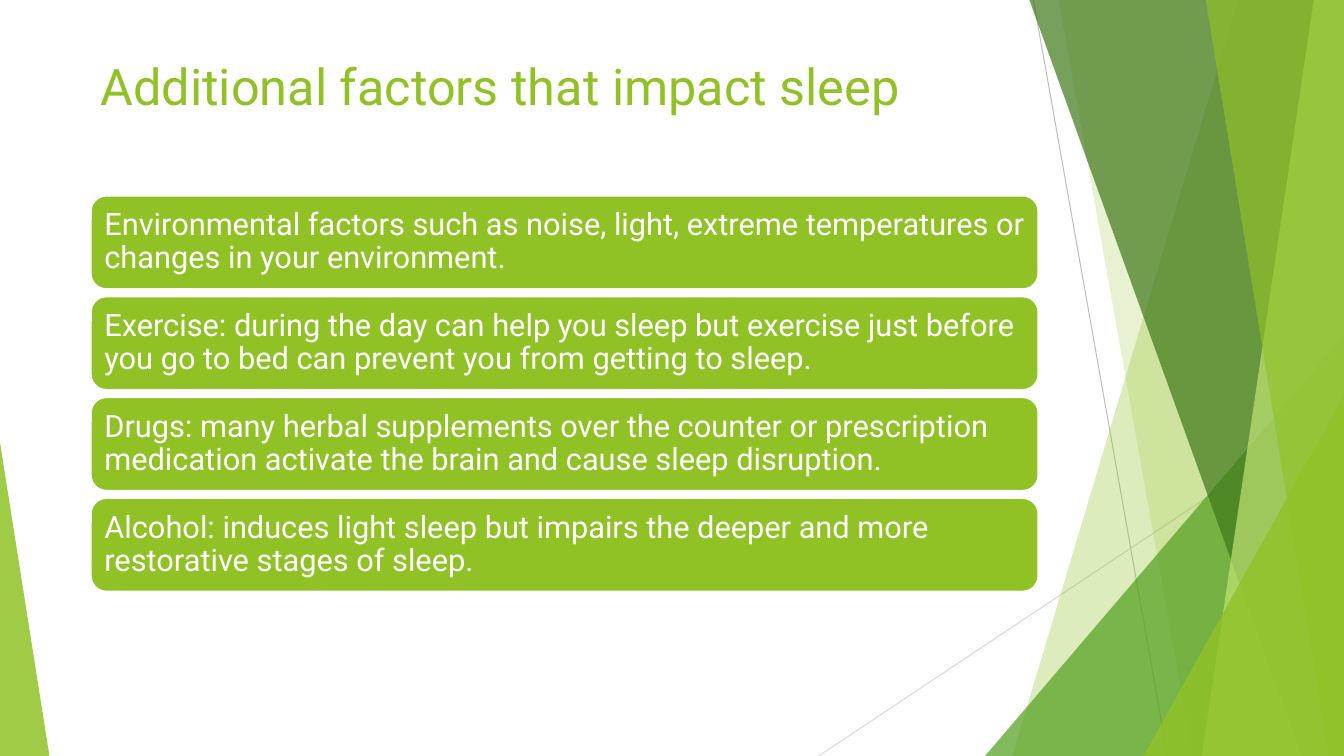
from pptx import Presentation
from pptx.dml.color import RGBColor
from pptx.enum.shapes import MSO_CONNECTOR, MSO_SHAPE
from pptx.enum.text import MSO_ANCHOR, PP_ALIGN
from pptx.oxml.ns import qn
from pptx.util import Inches, Pt
from lxml.etree import SubElement

W, H = 13.33, 7.5
FONT, GREEN, WHITE = "Roboto", "90C226", "FFFFFF"
TITLE = "Additional factors that impact sleep"
FACTORS = [
    "Environmental factors such as noise, light, extreme temperatures or changes in your environment.",
    "Exercise: during the day can help you sleep but exercise just before you go to bed can prevent you from getting to sleep.",
    "Drugs: many herbal supplements over the counter or prescription medication activate the brain and cause sleep disruption.",
    "Alcohol: induces light sleep but impairs the deeper and more restorative stages of sleep.",
]
RAYS = [((10.25, 0), (11.58, H), "BFBFBF"), ((W, 4.03), (8.12, H), "D9D9D9")]
FACETS = [
    ("band", 12.28, 10.04, GREEN, 30),
    ("band", 10.5, 11.83, GREEN, 20),
    ("right", 3.56, 4.17, "54A021", 72),
    ("band", 10.21, 12.91, "3F7819", 70),
    ("band", 13.03, 11.92, "C0E474", 70),
    ("band", 11.96, 13.18, GREEN, 65),
    ("right", 1.99, 3.57, GREEN, 80),
    ("left", 0.49, 3.11, GREEN, 85),
]
LEFT, WIDTH = 0.9, 9.4
TITLE_TOP, TITLE_H = 0.5, 1.44
CARD_TOP, CARD_H, PITCH = 1.94, 0.93, 1.0


def color(value):
    return RGBColor.from_string(value)


def apply(obj, formats):
    for name, value in formats.items():
        setattr(obj, name, value)


def paint(sp, fill, alpha=100):
    sp.shadow.inherit = False
    sp.fill.solid()
    sp.fill.fore_color.rgb = color(fill)
    sp.line.fill.background()
    if alpha < 100:
        clr = sp.fill._xPr.find(qn("a:solidFill"))[0]
        SubElement(clr, qn("a:alpha")).set("val", str(alpha * 1000))


def write(sp, text, size, fill, frame, para):
    tf = sp.text_frame
    apply(tf, {"word_wrap": True, **frame})
    p = tf.paragraphs[0]
    apply(p, {"alignment": PP_ALIGN.LEFT, **para})
    r = p.add_run()
    r.text = text
    apply(r.font, {"name": FONT, "size": Pt(size)})
    r.font.color.rgb = color(fill)


def add_ray(s, start, end, stroke):
    ln = s.shapes.add_connector(MSO_CONNECTOR.STRAIGHT, *map(Inches, start + end))
    ln.line.width = Pt(0.75)
    ln.line.color.rgb = color(stroke)
    SubElement(ln._element.spPr, qn("a:effectLst"))


def add_facet(s, kind, a, b, fill, alpha):
    if kind == "band":
        fb = s.shapes.build_freeform(Inches(a), 0, scale=1.0)
        corners = [(W, 0), (W, H), (b, H)]
        fb.add_line_segments([(Inches(x), Inches(y)) for x, y in corners])
        sp = fb.convert_to_shape()
    else:
        x = W - a if kind == "right" else 0
        sp = s.shapes.add_shape(MSO_SHAPE.ISOSCELES_TRIANGLE, *map(Inches, (x, H - b, a, b)))
        sp.adjustments[0] = 1 if kind == "right" else 0
    paint(sp, fill, alpha)


def add_card(s, row, text):
    box = LEFT, CARD_TOP + row * PITCH, WIDTH, CARD_H
    sp = s.shapes.add_shape(MSO_SHAPE.ROUNDED_RECTANGLE, *map(Inches, box))
    paint(sp, GREEN)
    sp.line.color.rgb = color(WHITE)
    sp.line.width = Pt(1.5)
    sides = ("left", "top", "right", "bottom")
    frame = {f"margin_{side}": Inches(0.09) for side in sides}
    frame["vertical_anchor"] = MSO_ANCHOR.MIDDLE
    write(sp, text, 22, WHITE, frame, {"line_spacing": 0.9})


def main():
    prs = Presentation()
    apply(prs, {"slide_width": Inches(W), "slide_height": Inches(H)})
    s = prs.slides.add_slide(prs.slide_layouts[6])
    for ray in RAYS:
        add_ray(s, *ray)
    for facet in FACETS:
        add_facet(s, *facet)
    title = s.shapes.add_textbox(*map(Inches, (LEFT, TITLE_TOP, WIDTH, TITLE_H)))
    write(title, TITLE, 36, GREEN, {"vertical_anchor": MSO_ANCHOR.TOP}, {})
    for row, text in enumerate(FACTORS):
        add_card(s, row, text)
    prs.save("out.pptx")


if __name__ == "__main__":
    main()
